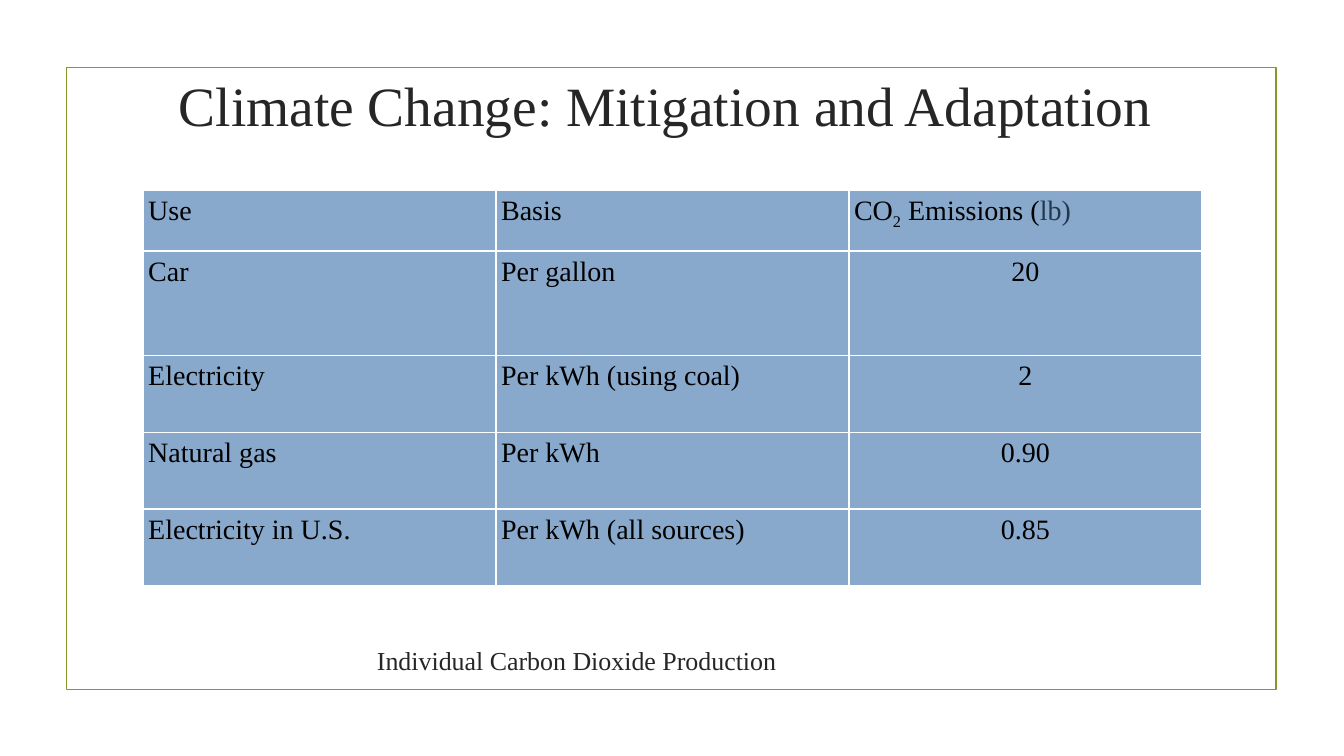
from lxml import etree
from pptx import Presentation
from pptx.dml.color import RGBColor
from pptx.enum.shapes import MSO_SHAPE
from pptx.enum.text import MSO_ANCHOR, PP_ALIGN
from pptx.oxml.ns import qn
from pptx.util import Inches, Pt

RECTANGLE = MSO_SHAPE.RECTANGLE
TOP, MIDDLE = MSO_ANCHOR.TOP, MSO_ANCHOR.MIDDLE
LEFT, CENTER = PP_ALIGN.LEFT, PP_ALIGN.CENTER

HEADERS = ["Use", "Basis", ["CO", "2", " Emissions (", "lb)"]]
EMISSIONS = [
    ["Car", "Per gallon", "20"],
    ["Electricity", "Per kWh (using coal)", "2"],
    ["Natural gas", "Per kWh", "0.90"],
    ["Electricity in U.S.", "Per kWh (all sources)", "0.85"],
]
ROW_HEIGHTS = [0.6, 1.04, 0.76, 0.76, 0.76]
COLUMN_WIDTH = 3.5


def color(value):
    return RGBColor.from_string(value)


class SlideBuilder:
    font_name = "Times New Roman"
    text_color = "262626"
    cell_text_color = "000000"
    unit_color = "22384E"
    cell_color = "88A9CB"
    border_color = "FFFFFF"
    frame_color = "83992A"

    def __init__(self, slide):
        self.slide = slide

    def style(self, paragraph, size, font_color, alignment=LEFT):
        paragraph.alignment = alignment
        paragraph.font.name = self.font_name
        paragraph.font.size = Pt(size)
        paragraph.font.color.rgb = color(font_color)

    def frame(self, left, top, width, height):
        shape = self.slide.shapes.add_shape(
            RECTANGLE, Inches(left), Inches(top), Inches(width), Inches(height))
        shape.shadow.inherit = False
        shape.fill.background()
        shape.line.color.rgb = color(self.frame_color)
        shape.line.width = Pt(1.25)

    def text(self, content, left, top, width, height, size, alignment=LEFT, anchor=TOP):
        box = self.slide.shapes.add_textbox(
            Inches(left), Inches(top), Inches(width), Inches(height))
        text_frame = box.text_frame
        text_frame.word_wrap = True
        text_frame.vertical_anchor = anchor
        paragraph = text_frame.paragraphs[0]
        paragraph.text = content
        self.style(paragraph, size, self.text_color, alignment)

    def borders(self, cell):
        properties = cell._tc.get_or_add_tcPr()
        for side in ("lnL", "lnR", "lnT", "lnB"):
            line = etree.SubElement(properties, qn(f"a:{side}"), w=str(Pt(1)))
            fill = etree.SubElement(line, qn("a:solidFill"))
            etree.SubElement(fill, qn("a:srgbClr"), val=self.border_color)

    def cell(self, cell, content, alignment):
        cell.margin_left = cell.margin_right = Inches(0.05)
        cell.margin_top = cell.margin_bottom = Inches(0.05)
        self.borders(cell)
        cell.fill.solid()
        cell.fill.fore_color.rgb = color(self.cell_color)
        paragraph = cell.text_frame.paragraphs[0]
        self.style(paragraph, 20, self.cell_text_color, alignment)
        parts = [content] if isinstance(content, str) else content
        for part in parts:
            run = paragraph.add_run()
            run.text = part
            if len(parts) > 1 and part == "2":
                run._r.get_or_add_rPr().set("baseline", "-25000")
            elif part == "lb)":
                run.font.color.rgb = color(self.unit_color)

    def table(self, rows, left, top):
        column_count = len(rows[0])
        table = self.slide.shapes.add_table(
            len(rows), column_count, Inches(left), Inches(top),
            Inches(COLUMN_WIDTH * column_count), Inches(sum(ROW_HEIGHTS))).table
        for column in table.columns:
            column.width = Inches(COLUMN_WIDTH)
        for row_index, row in enumerate(rows):
            table.rows[row_index].height = Inches(ROW_HEIGHTS[row_index])
            for column_index, content in enumerate(row):
                is_value = row_index > 0 and column_index == column_count - 1
                self.cell(table.cell(row_index, column_index), content,
                          CENTER if is_value else LEFT)


def main():
    presentation = Presentation()
    presentation.slide_width = Inches(13.33)
    presentation.slide_height = Inches(7.5)
    builder = SlideBuilder(presentation.slides.add_slide(presentation.slide_layouts[6]))
    builder.frame(0.66, 0.67, 12, 6.17)
    builder.text("Climate Change: Mitigation and Adaptation",
                 1.35, 0.32, 10.5, 1.43, 39.6, CENTER, MIDDLE)
    builder.table([HEADERS] + EMISSIONS, 1.42, 1.89)
    builder.text("Individual Carbon Dioxide Production", 3.64, 6.35, 6.06, 0.37, 18.5)
    presentation.save("out.pptx")


if __name__ == "__main__":
    main()
